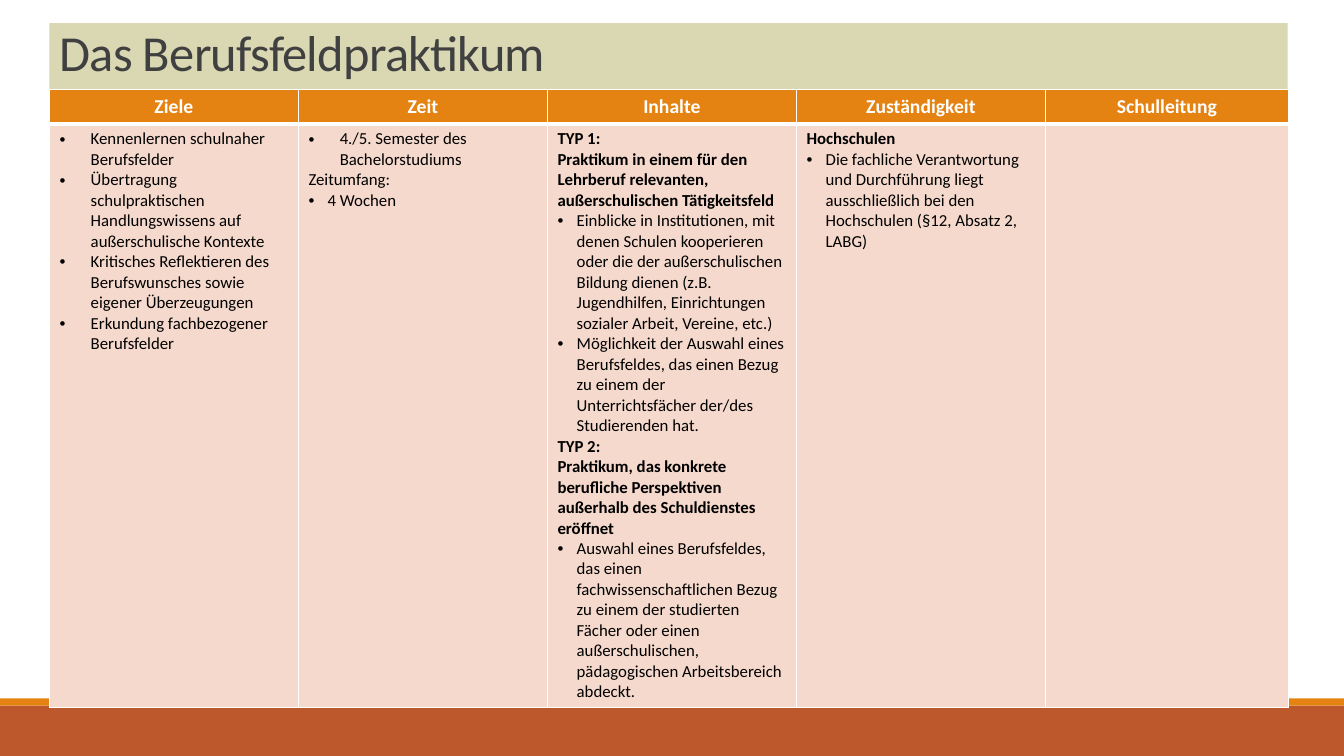
from dataclasses import dataclass

from pptx import Presentation
from pptx.dml.color import RGBColor
from pptx.enum.shapes import MSO_SHAPE as Shape
from pptx.enum.text import MSO_ANCHOR as Anchor, MSO_AUTO_SIZE as AutoSize, PP_ALIGN as Align
from pptx.oxml.ns import qn
from pptx.util import Inches, Pt
from lxml.etree import SubElement

FONT = "Calibri"
WHITE, BLACK, GREY = "FFFFFF", "000000", "404040"
ORANGE, RUST, SAND, BLUSH = "E48312", "BD582C", "DAD7B3", "F5D9CC"
WIDE, NARROW = 0.31, 0.19  # hanging indents of bulleted lines


@dataclass
class Bar:
    top: float
    height: float
    color: str


@dataclass
class Line:
    text: str
    indent: float = 0
    bold: bool = False


@dataclass
class Column:
    heading: str
    width: float
    lines: list[Line]


FOOTER_BARS = [Bar(7, 0.5, RUST), Bar(6.93, 0.07, ORANGE)]

COLUMNS = [
    Column("Ziele", 2.47, [
        Line("Kennenlernen schulnaher Berufsfelder", WIDE),
        Line("Übertragung schulpraktischen Handlungswissens auf außerschulische Kontexte", WIDE),
        Line("Kritisches Reflektieren des Berufswunsches sowie eigener Überzeugungen", WIDE),
        Line("Erkundung fachbezogener Berufsfelder", WIDE),
    ]),
    Column("Zeit", 2.47, [
        Line("4./5. Semester des Bachelorstudiums", WIDE),
        Line("Zeitumfang:"),
        Line("4 Wochen", NARROW),
    ]),
    Column("Inhalte", 2.47, [
        Line("TYP 1:", bold=True),
        Line("Praktikum in einem für den Lehrberuf relevanten, "
             "außerschulischen Tätigkeitsfeld", bold=True),
        Line("Einblicke in Institutionen, mit denen Schulen kooperieren oder die der "
             "außerschulischen Bildung dienen (z.B. Jugendhilfen, Einrichtungen "
             "sozialer Arbeit, Vereine, etc.)", NARROW),
        Line("Möglichkeit der Auswahl eines Berufsfeldes, das einen Bezug zu einem der "
             "Unterrichtsfächer der/des Studierenden hat.", NARROW),
        Line("TYP 2:", bold=True),
        Line("Praktikum, das konkrete berufliche Perspektiven außerhalb des "
             "Schuldienstes eröffnet", bold=True),
        Line("Auswahl eines Berufsfeldes, das einen fachwissenschaftlichen Bezug zu einem "
             "der studierten Fächer oder einen außerschulischen, pädagogischen "
             "Arbeitsbereich abdeckt.", NARROW),
    ]),
    Column("Zuständigkeit", 2.47, [
        Line("Hochschulen", bold=True),
        Line("Die fachliche Verantwortung und Durchführung liegt ausschließlich bei den "
             "Hochschulen (§12, Absatz 2, LABG)", NARROW),
    ]),
    Column("Schulleitung", 2.41, []),
]


def paint(fill, color: str) -> None:
    fill.solid()
    fill.fore_color.rgb = RGBColor.from_string(color)


def style_font(paragraph, size: float, color: str, bold: bool = False) -> None:
    font = paragraph.font
    font.name, font.size, font.bold = FONT, Pt(size), bold
    font.color.rgb = RGBColor.from_string(color)


def add_bar(slide, bar: Bar, width: int) -> None:
    shape = slide.shapes.add_shape(
        Shape.RECTANGLE, 0, Inches(bar.top), width, Inches(bar.height))
    shape.shadow.inherit = False
    paint(shape.fill, bar.color)
    shape.line.fill.background()


def set_bullet(paragraph, indent: float) -> None:
    properties = paragraph._p.get_or_add_pPr()
    properties.set("marL", str(Inches(indent)))
    properties.set("indent", str(-Inches(indent)))
    SubElement(properties, qn("a:buFont")).set("typeface", "Arial")
    SubElement(properties, qn("a:buChar")).set("char", "•")


def set_cell(cell, color: str, bottom_width: float) -> None:
    """Borders come before the fill in the cell properties."""
    properties = cell._tc.get_or_add_tcPr()
    for side, width in (("L", 1), ("R", 1), ("T", 1), ("B", bottom_width)):
        border = SubElement(properties, qn(f"a:ln{side}"))
        border.set("w", str(Pt(width)))
        border_fill = SubElement(border, qn("a:solidFill"))
        SubElement(border_fill, qn("a:srgbClr")).set("val", WHITE)
    paint(cell.fill, color)


def fill_heading(cell, heading: str) -> None:
    set_cell(cell, ORANGE, 3)
    cell.vertical_anchor = Anchor.MIDDLE
    paragraph = cell.text_frame.paragraphs[0]
    paragraph.text = heading
    paragraph.alignment = Align.CENTER
    style_font(paragraph, 14, WHITE, bold=True)


def fill_body(cell, lines: list[Line]) -> None:
    set_cell(cell, BLUSH, 1)
    frame = cell.text_frame
    for index, line in enumerate(lines):
        paragraph = frame.add_paragraph() if index else frame.paragraphs[0]
        paragraph.text = line.text
        if line.indent:
            set_bullet(paragraph, line.indent)
        style_font(paragraph, 12, BLACK, line.bold)


def format_title(title) -> None:
    title.left, title.top = Inches(0.49), Inches(0.23)
    title.width, title.height = Inches(12.28), Inches(0.66)
    paint(title.fill, SAND)
    frame = title.text_frame
    frame.auto_size = AutoSize.NONE
    frame.vertical_anchor = Anchor.MIDDLE
    paragraph = frame.paragraphs[0]
    paragraph.text = "Das Berufsfeldpraktikum"
    paragraph.alignment = Align.LEFT
    paragraph.line_spacing = 0.85
    style_font(paragraph, 36, GREY)
    paragraph._p.pPr.find(qn("a:defRPr")).set("spc", "-50")


def add_overview(slide, columns: list[Column]) -> None:
    table = slide.shapes.add_table(
        2, len(columns), Inches(0.49), Inches(0.89), Inches(12.28), Inches(5.94)).table
    table.rows[0].height, table.rows[1].height = Inches(0.34), Inches(5.6)
    for index, column in enumerate(columns):
        table.columns[index].width = Inches(column.width)
        fill_heading(table.cell(0, index), column.heading)
        fill_body(table.cell(1, index), column.lines)


def main() -> None:
    presentation = Presentation()
    presentation.slide_width, presentation.slide_height = Inches(13.33), Inches(7.5)
    slide = presentation.slides.add_slide(presentation.slide_layouts.get_by_name("Title Only"))

    # Footer bars, behind the table
    for bar in FOOTER_BARS:
        add_bar(slide, bar, presentation.slide_width)

    # Title and overview table
    format_title(slide.shapes.title)
    add_overview(slide, COLUMNS)

    presentation.save("out.pptx")


if __name__ == "__main__":
    main()
